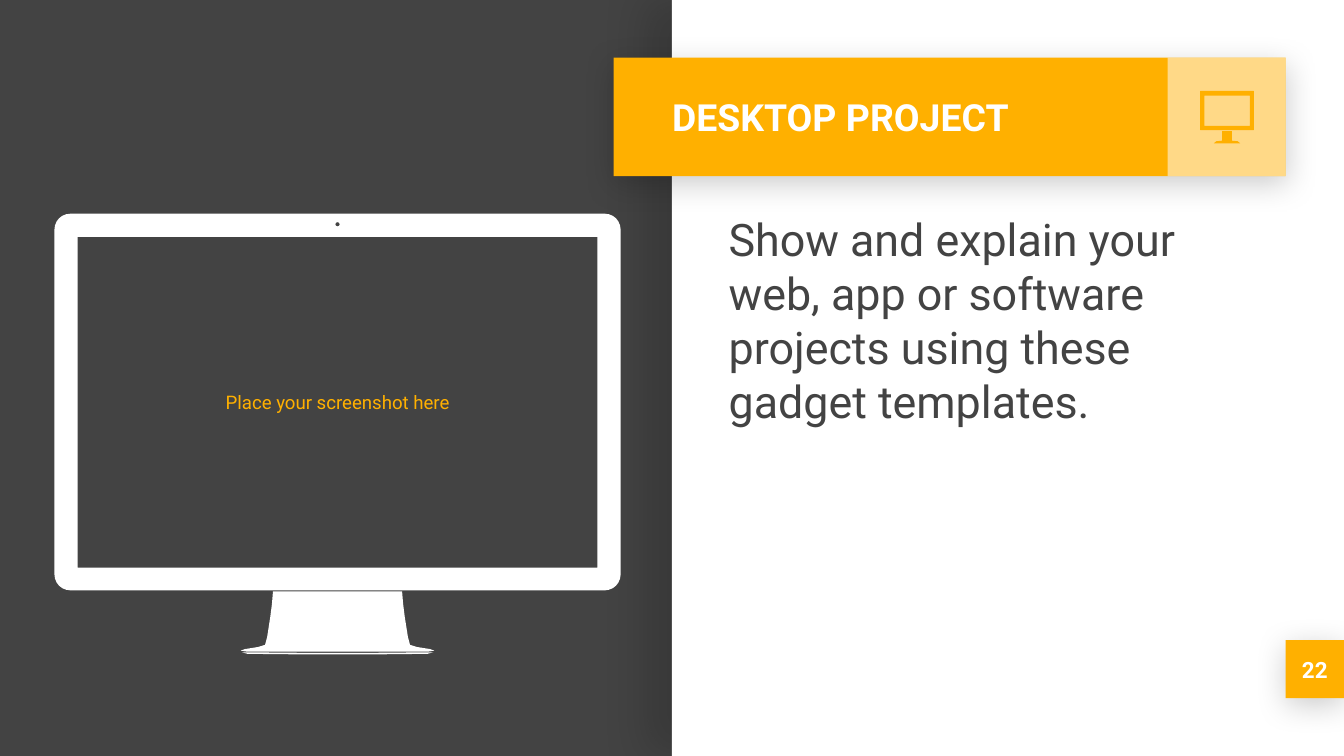
"""Build the desktop project slide with a monitor mock-up."""
import math

import lxml.etree
import pptx
import pptx.dml.color
import pptx.enum.shapes
import pptx.enum.text
import pptx.oxml.ns
import pptx.util

Cm = pptx.util.Cm
Pt = pptx.util.Pt
qn = pptx.oxml.ns.qn
ALIGN = pptx.enum.text.PP_ALIGN
ANCHOR = pptx.enum.text.MSO_ANCHOR
GREY = pptx.dml.color.RGBColor(0x43, 0x43, 0x43)
AMBER = pptx.dml.color.RGBColor(0xFF, 0xB0, 0x00)
WHITE = pptx.dml.color.RGBColor(0xFF, 0xFF, 0xFF)


def add_box(shapes, place, color, shade=None):
    """Add a plain rectangle; shade is alpha %, blur pt, distance pt, angle."""
    box = shapes.add_shape(pptx.enum.shapes.MSO_SHAPE.RECTANGLE, *map(Cm, place))
    box.shadow.inherit = False
    box.fill.solid()
    box.fill.fore_color.rgb = color
    box.line.fill.background()
    if shade:
        alpha, blur, dist, angle = shade
        effects = box.element.spPr.find(qn("a:effectLst"))
        outer = lxml.etree.SubElement(
            effects, qn("a:outerShdw"), blurRad=str(Pt(blur)), dist=str(Pt(dist)),
            dir=str(angle * 60000), algn="bl", rotWithShape="0")
        black = lxml.etree.SubElement(outer, qn("a:srgbClr"), val="000000")
        lxml.etree.SubElement(black, qn("a:alpha"), val=str(alpha * 1000))
    return box


def add_form(shapes, middle, halves, color):
    """Add a freeform from right-hand outlines mirrored about the middle."""
    form = None
    for half in halves:
        left = [(-x, y) for x, y in reversed(half)]
        points = [(Cm(middle + x), Cm(y)) for x, y in half + left]
        if form is None:
            form = shapes.build_freeform(*points[0])
        else:
            form.move_to(*points[0])
        form.add_line_segments(points[1:], close=True)
    shape = form.convert_to_shape()
    shape.shadow.inherit = False
    shape.fill.solid()
    shape.fill.fore_color.rgb = color
    shape.line.fill.background()


deck = pptx.Presentation()
deck.slide_width, deck.slide_height = Cm(25.4), Cm(14.29)
slide = deck.slides.add_slide(deck.slide_layouts[1])
shapes = slide.shapes
slide.background.fill.solid()
slide.background.fill.fore_color.rgb = GREY

add_box(shapes, (12.7, 0, 12.7, 14.29), WHITE, (15, 22.5, 15, 180))
badge = add_box(shapes, (24.3, 12.1, 1.1, 1.1), AMBER, (20, 16.9, 3.8, 90))
add_box(shapes, (11.6, 1.09, 12.7, 2.24), AMBER, (20, 16.9, 3.8, 90))
tile = add_box(shapes, (22.07, 1.09, 2.23, 2.24), WHITE)
tint = tile.element.spPr.find(qn("a:solidFill"))[0]
lxml.etree.SubElement(tint, qn("a:alpha"), val="53000")

bend = 0.3
turns = [math.radians(step) for step in range(0, 91, 15)]
frame = [(5.35 - bend + bend * math.sin(t), 4.04 + bend - bend * math.cos(t)) for t in turns]
frame += [(x, 15.2 - y) for x, y in reversed(frame)]
screen = [(4.91, 4.48), (4.91, 10.73)]
lens = [(0.04 * math.sin(2 * t), 4.24 - 0.04 * math.cos(2 * t)) for t in turns]
stand = [(1.22, 11.18), (1.24, 11.42), (1.27, 11.66), (1.33, 12.04), (1.37, 12.19),
         (1.5, 12.23), (1.75, 12.27), (1.83, 12.3), (1.7, 12.32)]
foot = [(0.7, 12.34), (1.81, 12.33), (1.7, 12.36), (0.7, 12.37)]
add_form(shapes, 6.38, [frame, screen, lens, stand, foot], WHITE)

icon = shapes.add_group_shape().shapes
neck = [(0.09, 2.48), (0.09, 2.66), (0.2, 2.67), (0.25, 2.71)]
rim = [(0.5, 1.72), (0.51, 1.73), (0.51, 2.45), (0.5, 2.46)]
glass = [(0.43, 1.81), (0.43, 2.38)]
add_form(icon, 23.19, [neck], AMBER)
add_form(icon, 23.19, [rim, glass], AMBER)

title, body = shapes.title, slide.placeholders[1]
for holder, place in ((title, (12.45, 1.09, 9.6, 2.24)), (body, (13.52, 3.76, 10.49, 8.15))):
    holder.left, holder.top, holder.width, holder.height = map(Cm, place)
    shapes.element.append(holder.element)
hint = shapes.add_textbox(Cm(1.47), Cm(4.48), Cm(9.82), Cm(6.25))

for shape, words, size, color, bold, align, anchor in (
    (title, "DESKTOP PROJECT", 20, WHITE, True, ALIGN.LEFT, ANCHOR.MIDDLE),
    (body, "Show and explain your web, app or software projects using these gadget templates.",
     24, GREY, False, ALIGN.LEFT, ANCHOR.TOP),
    (hint, "Place your screenshot here", 10, AMBER, False, ALIGN.CENTER, ANCHOR.MIDDLE),
    (badge, "22", 12, WHITE, True, ALIGN.CENTER, ANCHOR.MIDDLE),
):
    frame = shape.text_frame
    frame.word_wrap = True
    frame.auto_size = pptx.enum.text.MSO_AUTO_SIZE.NONE
    frame.vertical_anchor = anchor
    frame.margin_left = frame.margin_right = Cm(0.25)
    frame.margin_top = frame.margin_bottom = Cm(0.25)
    para = frame.paragraphs[0]
    props = para._p.get_or_add_pPr()
    props.set("marL", "0")
    props.set("indent", "0")
    lxml.etree.SubElement(props, qn("a:buNone"))
    para.alignment = align
    para.space_before = Pt(0)
    run = para.add_run()
    run.text = words
    run.font.name = "Roboto"
    run.font.size = Pt(size)
    run.font.bold = bold
    run.font.color.rgb = color

deck.save("out.pptx")
